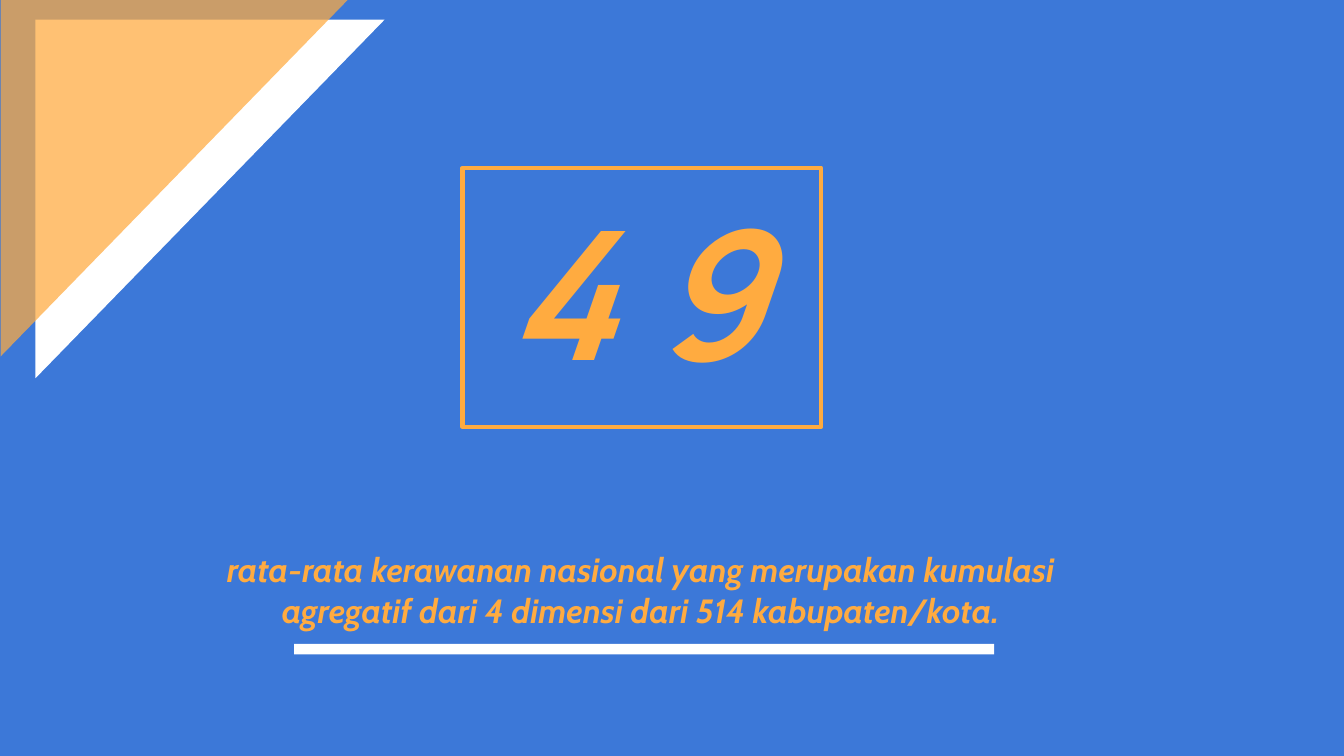
from dataclasses import dataclass

import pptx
import pptx.dml.color
import pptx.enum.shapes
import pptx.enum.text
import pptx.oxml
import pptx.oxml.ns
import pptx.util
from pptx.util import Cm

SHAPE = pptx.enum.shapes.MSO_SHAPE
ALIGN = pptx.enum.text.PP_ALIGN


@dataclass(frozen=True)
class Theme:
    background: str = "3C78D8"
    accent: str = "FFAB40"
    plain: str = "FFFFFF"
    number_font: str = "Manrope"
    body_font: str = "Cabin"
    number_size: int = 96
    body_size: int = 18
    frame_width: float = 2.25


class SlideBuilder:
    def __init__(self, prs, theme):
        self.theme = theme
        self.s = prs.slides.add_slide(prs.slide_layouts[6])
        self.paint(self.s.background.fill, theme.background)

    def paint(self, fill, color):
        fill.solid()
        fill.fore_color.rgb = pptx.dml.color.RGBColor.from_string(color)

    def text(self, text, box, font, size, align=ALIGN.LEFT):
        tf = self.s.shapes.add_textbox(*map(Cm, box)).text_frame
        tf.word_wrap = True
        tf.margin_left = tf.margin_right = Cm(0.25)
        tf.margin_top = tf.margin_bottom = Cm(0.25)
        tf.text = text
        p = tf.paragraphs[0]
        p.alignment = align
        r = p.runs[0]
        r.font.name = font
        r.font.size = pptx.util.Pt(size)
        r.font.bold = r.font.italic = True
        r.font.color.rgb = pptx.dml.color.RGBColor.from_string(self.theme.accent)

    def shape(self, kind, box, color):
        sp = self.s.shapes.add_shape(kind, *map(Cm, box))
        sp.shadow.inherit = False
        self.paint(sp.fill, color)
        sp.line.fill.background()
        return sp

    def frame(self, box):
        sp = self.shape(SHAPE.RECTANGLE, box, self.theme.accent)
        sp.fill.background()
        self.paint(sp.line.fill, self.theme.accent)
        sp.line.width = pptx.util.Pt(self.theme.frame_width)

    def corner(self, left, top, color, opacity=100):
        sp = self.shape(SHAPE.RIGHT_TRIANGLE, (left, top, 6.78, 6.6), color)
        sp.rotation = 90
        if opacity < 100:
            clr = sp.fill._xPr.find(".//" + pptx.oxml.ns.qn("a:srgbClr"))
            alpha = pptx.oxml.parse_xml(
                f'<a:alpha {pptx.oxml.ns.nsdecls("a")} val="{opacity * 1000}"/>')
            clr.append(alpha)


def main():
    prs = pptx.Presentation()
    prs.slide_width, prs.slide_height = Cm(25.4), Cm(14.29)
    theme = Theme()
    b = SlideBuilder(prs, theme)
    b.text("4 9", (9.32, 3.17, 5.92, 5.08), theme.number_font, theme.number_size)
    b.frame((8.74, 3.17, 6.78, 4.9))
    b.text("rata-rata kerawanan nasional yang merupakan kumulasi agregatif "
           "dari 4 dimensi dari 514 kabupaten/kota.",
           (3.73, 10.13, 16.76, 1.22), theme.body_font, theme.body_size, ALIGN.CENTER)
    b.shape(SHAPE.RECTANGLE, (5.56, 12.17, 13.23, 0.2), theme.plain)
    b.corner(0.58, 0.46, theme.plain)
    b.corner(-0.08, 0.05, theme.accent, opacity=73)
    prs.save("out.pptx")


if __name__ == "__main__":
    main()
